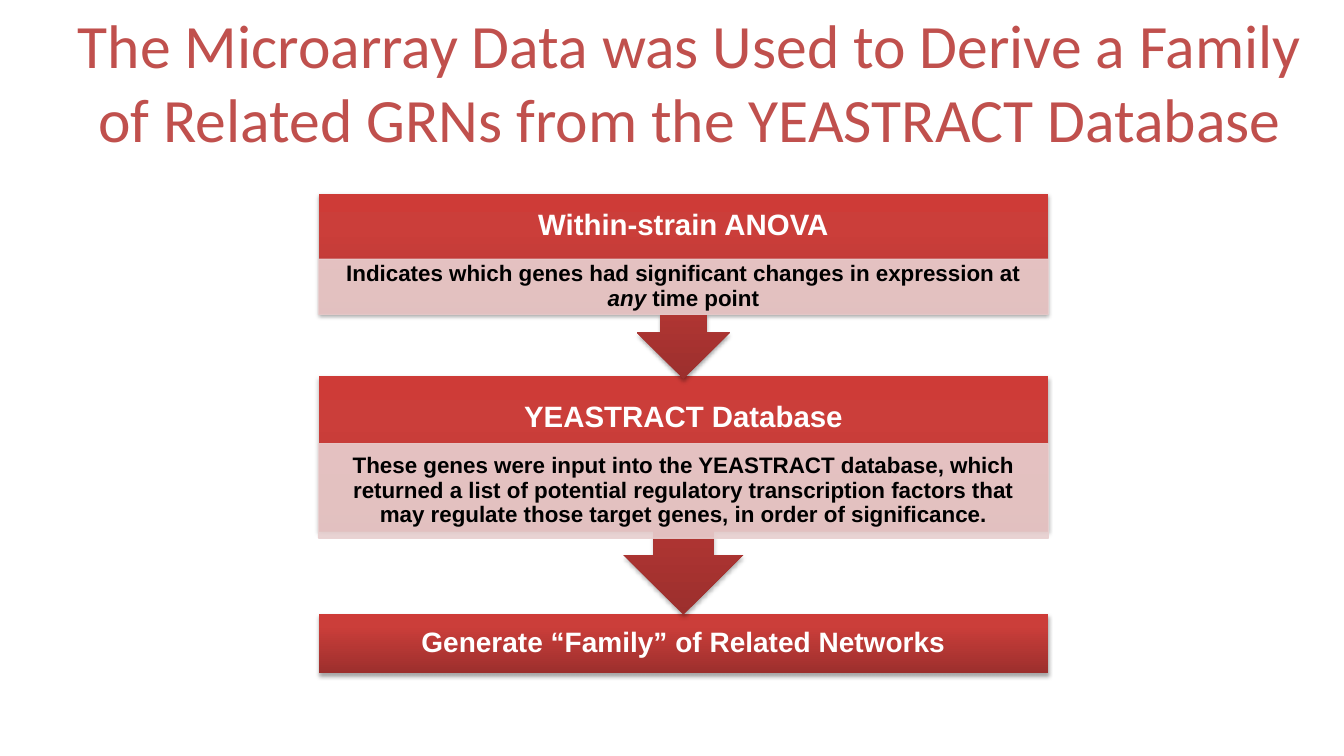
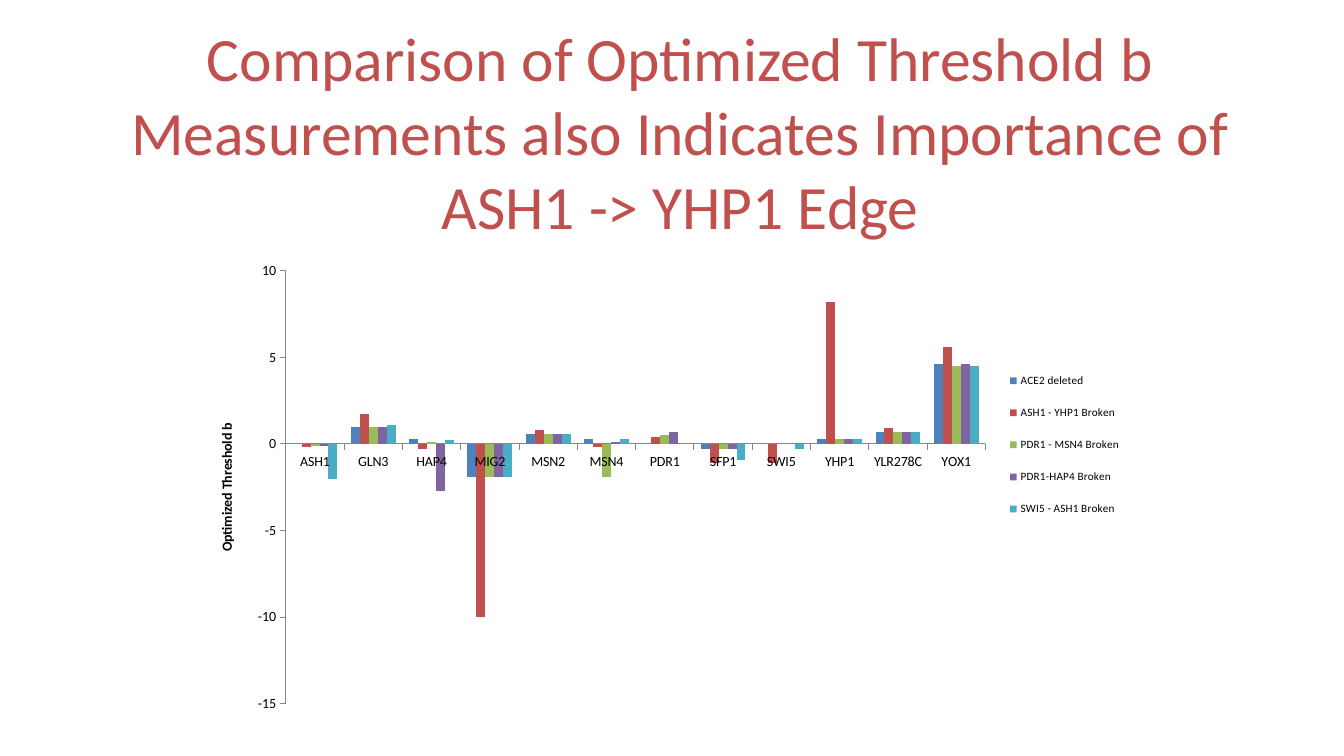
from lxml import etree
from pptx import Presentation
from pptx import util as u
from pptx.chart.data import CategoryChartData
from pptx.dml.color import RGBColor
from pptx.enum import chart as ch, shapes, text
from pptx.oxml import parse_xml
from pptx.oxml.ns import nsdecls, qn

TITLE_RED = RGBColor(0xC0, 0x50, 0x4D)
PALE_RED = RGBColor(0xE8, 0xD0, 0xD0)
WHITE = RGBColor(0xFF, 0xFF, 0xFF)
BLACK = RGBColor(0, 0, 0)
AXIS_GREY = RGBColor(0x86, 0x86, 0x86)
RED_STOPS = ((0, "9C2F2D"), (80, "CB3E3A"), (100, "CE3B37"))
SERIES_COLORS = [RGBColor.from_string(c) for c in
                 ("4F81BD", "C0504D", "9BBB59", "8064A2", "4BACC6")]

prs = Presentation()
prs.slide_width, prs.slide_height = u.Inches(13.33), u.Inches(7.5)
COL, ROW = prs.slide_width / 100, prs.slide_height / 100


def add_box(s, area, runs=(), size=44, font="Calibri", color=TITLE_RED, bold=False,
            shape=None, insets=(0.13, 0.07), spacing=None):
    """Add a centred box; area is in percent of the slide, every second run is italic."""
    x, y, w, h = area
    frame = [int(n) for n in (x * COL, y * ROW, w * COL, h * ROW)]
    if shape is None:
        sp = s.shapes.add_textbox(*frame)
    else:
        sp = s.shapes.add_shape(shape, *frame)
        sp.shadow.inherit = False
    tf = sp.text_frame
    tf.word_wrap = True
    tf.vertical_anchor = text.MSO_ANCHOR.MIDDLE
    tf.margin_left = tf.margin_right = u.Inches(insets[0])
    tf.margin_top = tf.margin_bottom = u.Inches(insets[1])
    p = tf.paragraphs[0]
    p.alignment = text.PP_ALIGN.CENTER
    p.line_spacing = spacing
    p.font.size, p.font.name, p.font.bold = u.Pt(size), font, bold
    p.font.color.rgb = color
    for i, words in enumerate(runs):
        r = p.add_run()
        r.text = words
        if i % 2:
            r.font.italic = True
    return sp


def set_layout(parent, index, x, y, w, h, inner=False):
    """Place a chart part, in shares of the chart area."""
    for old in parent.findall(qn("c:layout")):
        parent.remove(old)
    target = '<c:layoutTarget val="inner"/>' if inner else ""
    parent.insert(index, parse_xml(
        f'<c:layout {nsdecls("c")}><c:manualLayout>{target}'
        '<c:xMode val="edge"/><c:yMode val="edge"/>'
        f'<c:x val="{x}"/><c:y val="{y}"/><c:w val="{w}"/><c:h val="{h}"/>'
        '</c:manualLayout></c:layout>'))


# Slide 1: flow from the gene test to the networks
s = prs.slides.add_slide(prs.slide_layouts[6])
add_box(s, (3.75, 0.4, 95.2, 20.67),
        ["The Microarray Data was Used to Derive a Family of Related GRNs "
         "from the YEASTRACT Database"])

FLOW_X, FLOW_W = 23.7, 54.3
HEAD_SHARE = 0.35
CALLOUT = shapes.MSO_SHAPE.DOWN_ARROW_CALLOUT
RECT = shapes.MSO_SHAPE.RECTANGLE
# shape, top, height, heading, heading size, detail top, detail height, detail runs
steps = [
    (RECT, 81.2, 7.87, "Generate “Family” of Related Networks", 20, 0, 0, ()),
    (CALLOUT, 49.73, 31.6, "YEASTRACT Database", 21, 58.67, 12.53,
     ("These genes were input into the YEASTRACT database, which returned a list of "
      "potential regulatory transcription factors that may regulate those target genes, "
      "in order of significance.",)),
    (CALLOUT, 25.6, 24.53, "Within-strain ANOVA", 21, 34.27, 7.33,
     ("Indicates which genes had significant changes in expression at ", "any",
      " time point")),
]
for shape, top, height, heading, size, detail_top, detail_height, detail in steps:
    sp = add_box(s, (FLOW_X, top, FLOW_W, height), shape=shape)
    if shape == CALLOUT:
        sp.adjustments[3] = 0.65
    sp.line.fill.background()
    sp.fill.gradient()
    sp.fill.gradient_angle = 90
    stops = sp._element.spPr.find(".//" + qn("a:gsLst"))
    stops.clear()
    for pos, rgb in RED_STOPS:
        stop = etree.SubElement(stops, qn("a:gs"), pos=str(pos * 1000))
        etree.SubElement(stop, qn("a:srgbClr"), val=rgb)
    sp._element.spPr.find(qn("a:effectLst")).append(parse_xml(
        f'<a:outerShdw {nsdecls("a")} blurRad="{u.Pt(3.1)}" dist="{u.Pt(1.8)}" '
        'dir="5400000" rotWithShape="0"><a:srgbClr val="000000">'
        '<a:alpha val="35000"/></a:srgbClr></a:outerShdw>'))

    head_height = height * HEAD_SHARE if detail else height
    add_box(s, (FLOW_X, top, FLOW_W, head_height), [heading], size, "Arial", WHITE, True,
            insets=(0.16, 0.16), spacing=0.9)
    if detail:
        sp = add_box(s, (FLOW_X, detail_top, FLOW_W, detail_height), detail, 16, "Arial",
                     BLACK, True, RECT, (0.12, 0.02), 0.9)
        sp.fill.solid()
        sp.fill.fore_color.rgb = sp.line.color.rgb = PALE_RED
        sp.line.width = u.Pt(0.75)
        for clr in sp._element.spPr.iter(qn("a:srgbClr")):
            etree.SubElement(clr, qn("a:alpha"), val="90000")

# Slide 2: threshold chart
s = prs.slides.add_slide(prs.slide_layouts[6])
add_box(s, (5.63, 8.93, 90, 16.67),
        ["Comparison of Optimized Threshold b Measurements also Indicates Importance of "
         "ASH1 -> YHP1 Edge"])

cd = CategoryChartData()
cd.categories = ["ASH1", "GLN3", "HAP4", "MIG2", "MSN2", "MSN4", "PDR1", "SFP1", "SWI5",
                 "YHP1", "YLR278C", "YOX1"]
thresholds = {
    "ACE2 deleted": (0, 1, 0.3, -1.9, 0.6, 0.3, 0, -0.3, 0, 0.3, 0.7, 4.6),
    "ASH1 - YHP1 Broken": (-0.2, 1.7, -0.3, -10, 0.8, -0.2, 0.4, -1.1, -1.1, 8.2, 0.9, 5.6),
    "PDR1 - MSN4 Broken": (-0.1, 1, 0.1, -1.9, 0.6, -1.9, 0.5, -0.3, 0, 0.3, 0.7, 4.5),
    "PDR1-HAP4 Broken": (-0.1, 1, -2.7, -1.9, 0.6, 0.1, 0.7, -0.3, 0, 0.3, 0.7, 4.6),
    "SWI5 - ASH1 Broken": (-2, 1.1, 0.2, -1.9, 0.6, 0.3, 0, -0.9, -0.3, 0.3, 0.7, 4.5),
}
for name, values in thresholds.items():
    cd.add_series(name, values)
chart = s.shapes.add_chart(ch.XL_CHART_TYPE.COLUMN_CLUSTERED, int(14.33 * COL),
                           int(33.33 * ROW), int(69.4 * COL), int(62.27 * ROW), cd).chart
chart.has_title = False
chart.font.size, chart.font.name = u.Pt(10), "Calibri"
chart.font.color.rgb = BLACK

plot = chart.plots[0]
plot.gap_width, plot.overlap = 150, 0
plot.vary_by_categories = False
for series, color in zip(plot.series, SERIES_COLORS):
    series.invert_if_negative = False
    series.format.fill.solid()
    series.format.fill.fore_color.rgb = color

for axis in (chart.category_axis, chart.value_axis):
    axis.has_major_gridlines = False
    axis.major_tick_mark = ch.XL_TICK_MARK.OUTSIDE
    axis.minor_tick_mark = ch.XL_TICK_MARK.NONE
    axis.format.line.color.rgb = AXIS_GREY
    axis.format.line.width = u.Pt(0.75)
axis = chart.value_axis
axis.minimum_scale, axis.maximum_scale, axis.major_unit = -15, 10, 5
p = axis.axis_title.text_frame.paragraphs[0]
p.text = "Optimized Threshold b"
p.font.size, p.font.name, p.font.bold = u.Pt(10), "Calibri", True
p.font.color.rgb = BLACK

chart.has_legend = True
chart.legend.include_in_layout = False
set_layout(chart.legend._element, 1, 0.87, 0.22, 0.13, 0.38)
chart.legend.font.size, chart.legend.font.name = u.Pt(8), "Calibri"
chart.legend.font.color.rgb = BLACK
set_layout(chart._chartSpace.chart.plotArea, 0, 0.1, 0.04, 0.75, 0.92, inner=True)

prs.save("out.pptx")
